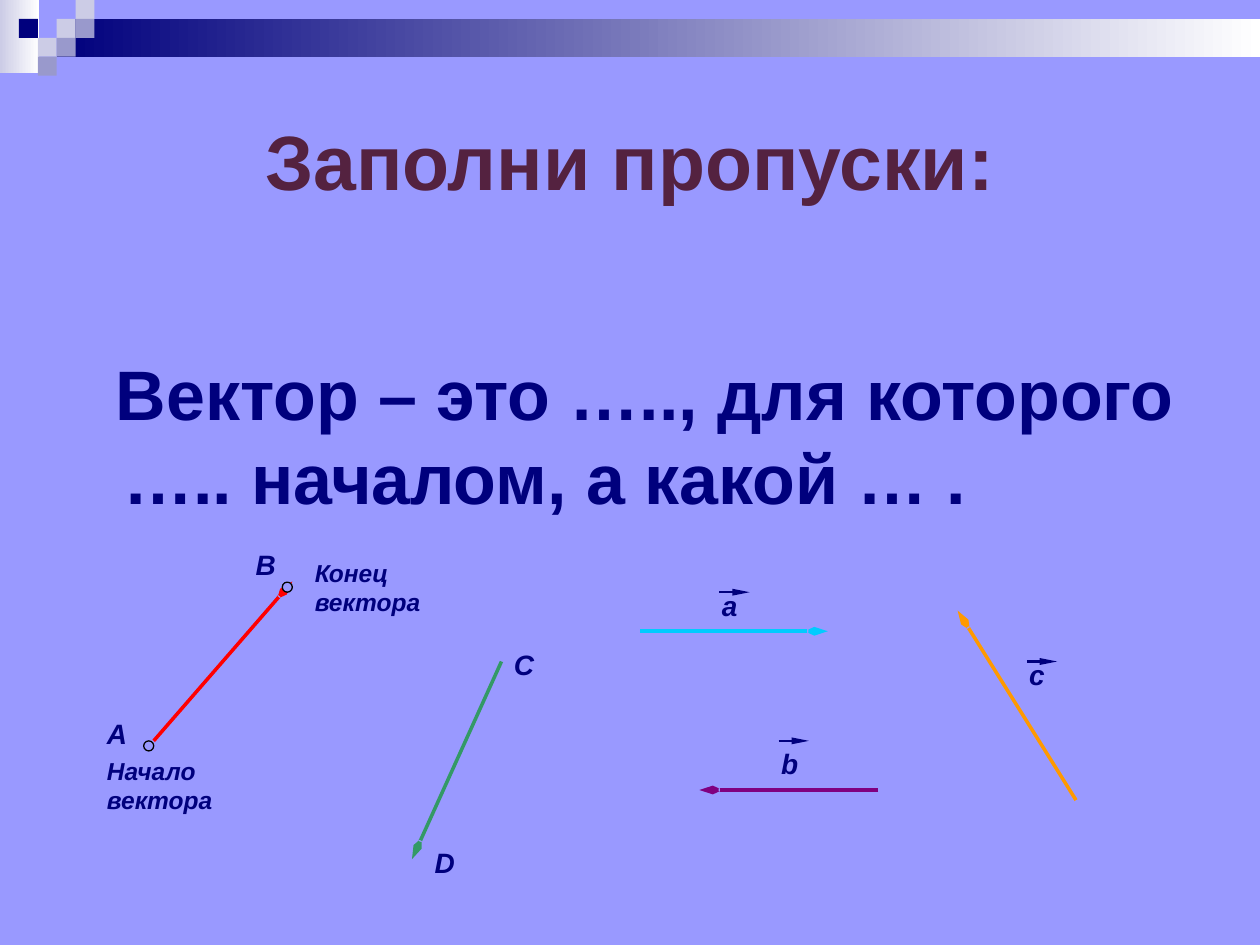
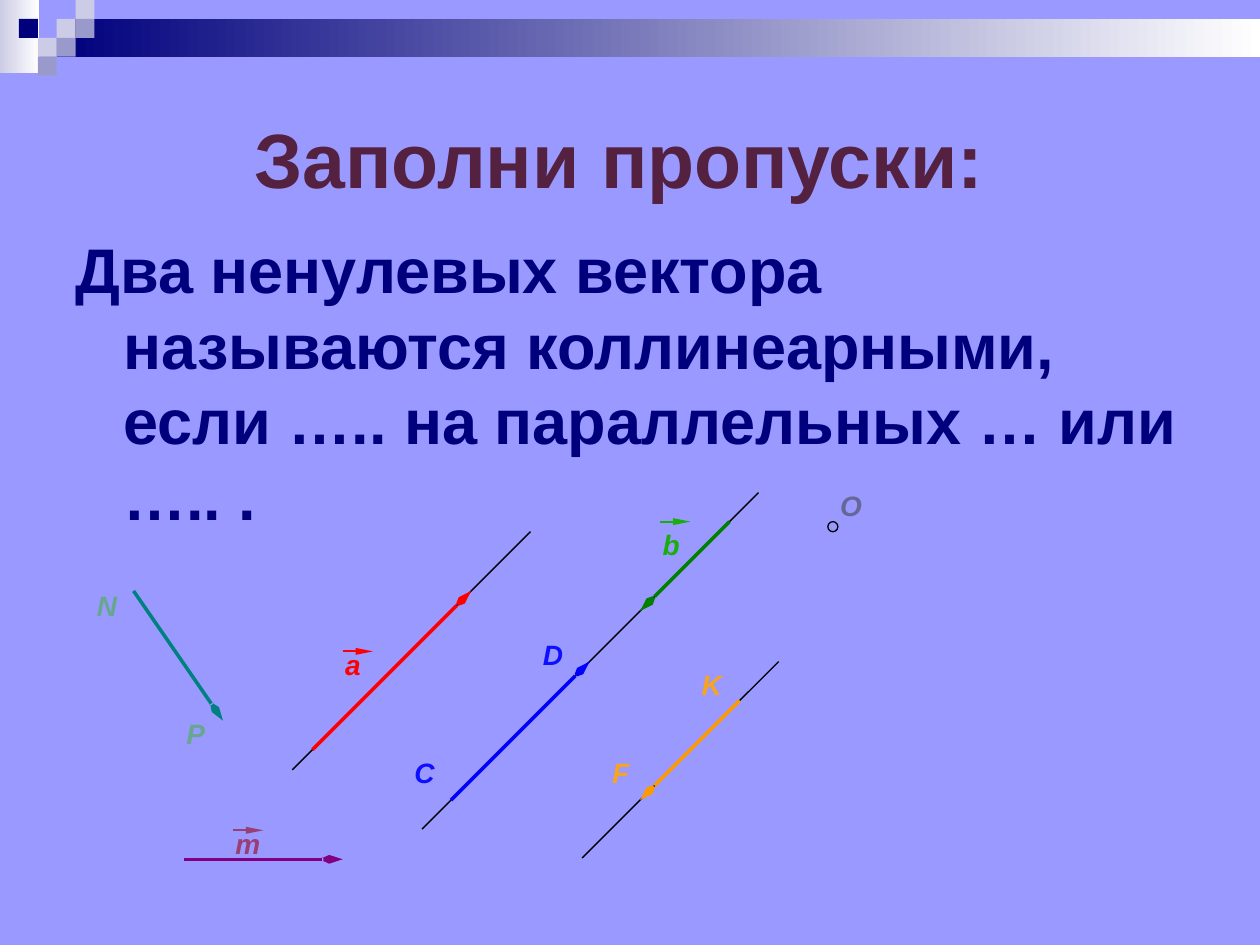
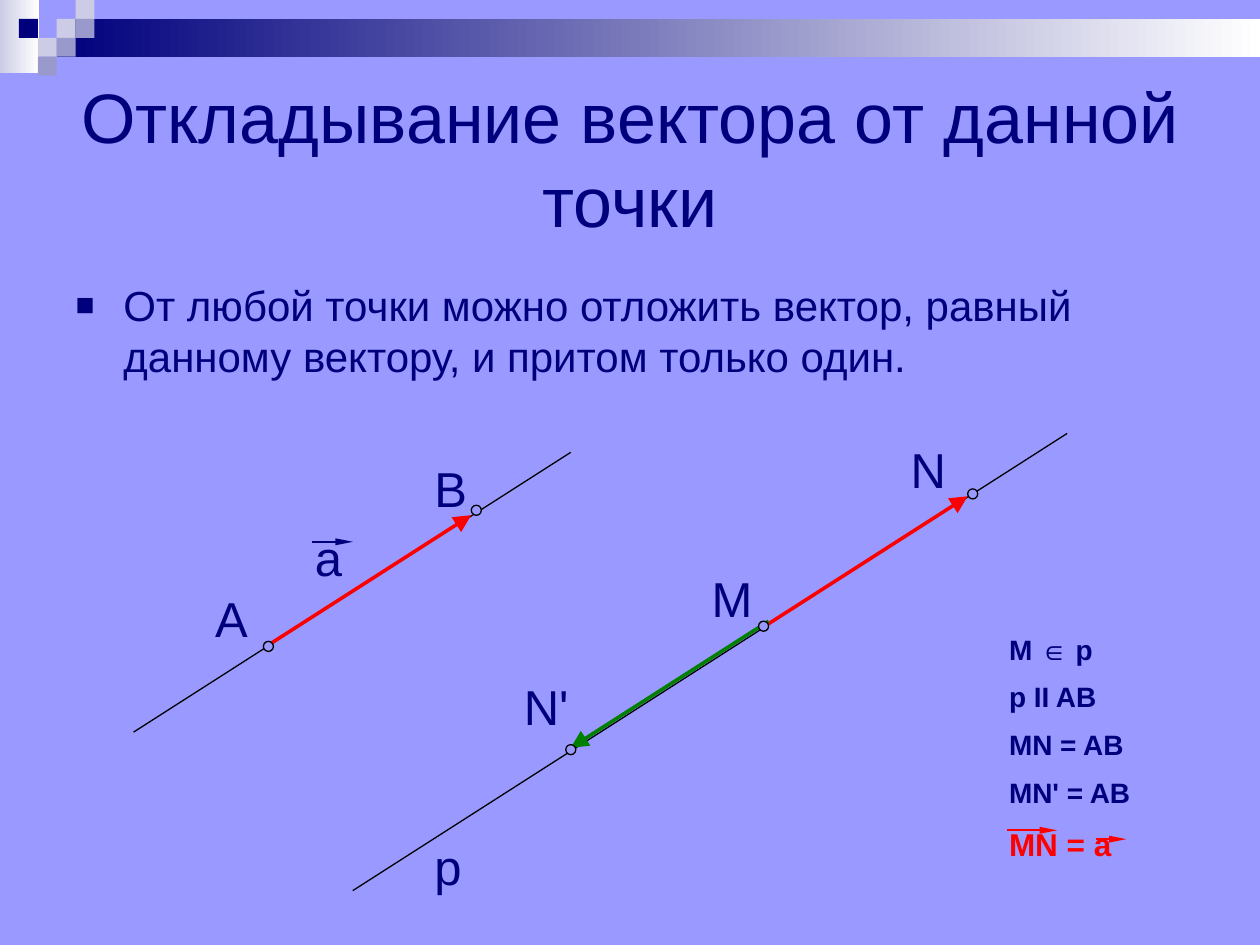
from lxml.etree import SubElement
from pptx import Presentation
from pptx.dml.color import RGBColor
from pptx.enum.shapes import MSO_CONNECTOR, MSO_SHAPE
from pptx.enum.text import MSO_ANCHOR, MSO_AUTO_SIZE, PP_ALIGN
from pptx.oxml.ns import qn
from pptx.util import Inches, Pt

NAVY, LAVENDER, BLACK, PLUM = "00007D", "9999FF", "000000", "542240"
PALE, GREYISH, WHITE = "CCCCE6", "9999CC", "FFFFFF"
RED, GREEN, BLUE, ORANGE, PURPLE = "FF0000", "008000", "0000FF", "FF9900", "800080"
LIME, AMBER, INDIGO, MAUVE, SAGE = "19AE0E", "F7A51F", "0F0FFF", "993F75", "67A790"

# Line kinds: width in points, arrowhead, head width
LINE_KINDS = {
    "line": (0.75, None, None),
    "vector": (2, "arrow", "sm"),
    "big vector": (2, "triangle", "lg"),
    "overline": (1.25, "triangle", "sm"),
}
GRID = 0.08
SQUARE = 0.15
OVERLINED = "abcmа"
LETTER = {"size": Pt(16), "bold": True, "italic": True}
CAPTION = {**LETTER, "size": Pt(14)}
LARGE_LETTER = {"size": Pt(28)}
BOLD_HEADING = {"size": Pt(44), "bold": True}


def paint(part, colour):
    part.fill.solid()
    part.fill.fore_color.rgb = RGBColor.from_string(colour)


def write(paragraph, text, colour, font_values):
    run = paragraph.add_run()
    run.text = text
    for name, value in {"name": "Arial", **font_values}.items():
        setattr(run.font, name, value)
    paint(run.font, colour)


# Lines are grouped by slope: (x, y, run, colour); black ones are plain lines.
# Rings and labels start with their left and top.
lessons = [
    {
        "title": ("Заполни пропуски:", PLUM, BOLD_HEADING, 0.44, 1.65),
        "body": ("Вектор – это ….., для которого ….. началом, а какой … .",
                 {"size": Pt(40), "bold": True}, 2.73, 2.82),
        "first_indent": -0.06,
        "bullet": False,
        "vector": "vector",
        "lines": {
            -2.21: [(3.98, 5.25, -0.71, "339966")],
            0: [(5.08, 5.01, 1.49, "00CCFF"), (6.97, 6.27, -1.42, PURPLE)],
            1.6: [(8.54, 6.35, -0.94, ORANGE)],
            -1.15: [(1.22, 5.88, 1.1, RED)],
        },
        "rings": [(2.24, 4.62), (1.14, 5.88)],
        "font": LETTER,
        "labels": [
            ("В", 1.93, 4.3, NAVY), ("А", 0.75, 5.64, NAVY),
            ("Начало вектора", 0.75, 5.95, NAVY), ("Конец вектора", 2.4, 4.38, NAVY),
            ("C", 3.98, 5.09, NAVY), ("D", 3.35, 6.66, NAVY),
            ("a", 5.63, 4.62, NAVY), ("b", 6.1, 5.88, NAVY), ("c", 8.07, 5.17, NAVY),
        ],
    },
    {
        "title": ("Заполни пропуски: ", PLUM, BOLD_HEADING, 0.5, 1.5),
        "body": ("Два ненулевых вектора называются коллинеарными, "
                 "если ….. на параллельных … или ….. .",
                 {"size": Pt(36), "bold": True}, 1.78, 2.84),
        "first_indent": -0.38,
        "bullet": False,
        "vector": "vector",
        "lines": {
            -1: [(4.21, 4.22, -1.89, BLACK), (6.02, 3.91, -2.67, BLACK),
                 (6.18, 5.25, -1.56, BLACK), (2.48, 5.95, 1.26, RED),
                 (5.79, 4.14, -0.71, GREEN), (3.58, 6.35, 1.1, BLUE),
                 (5.87, 5.56, -0.79, ORANGE)],
            0: [(1.46, 6.82, 1.26, PURPLE)],
            1.45: [(1.06, 4.69, 0.71, "008080")],
        },
        "rings": [(6.57, 4.14)],
        "font": LETTER,
        "labels": [
            ("a", 2.64, 5.09, RED), ("C", 3.19, 5.95, INDIGO), ("D", 4.21, 5.01, INDIGO),
            ("b", 5.16, 4.14, LIME), ("F", 4.76, 5.95, AMBER), ("K", 5.47, 5.25, AMBER),
            ("O", 6.57, 3.83, "666699"), ("m", 1.77, 6.51, MAUVE),
            ("N", 0.67, 4.62, SAGE), ("P", 1.38, 5.64, SAGE),
        ],
    },
    {
        "title": ("Откладывание вектора от данной точки", NAVY,
                  {"size": Pt(40)}, 0.5, 1.5),
        "body": ("От любой точки можно отложить вектор, равный данному вектору, "
                 "и притом только один.", {"size": Pt(24)}, 2.17, 1.03),
        "first_indent": -0.38,
        "bullet": True,
        "vector": "big vector",
        "lines": {
            -0.64: [(8.47, 3.44, -5.67, BLACK), (4.53, 3.59, -3.47, BLACK),
                    (2.16, 5.1, 1.58, RED), (6.1, 4.95, 1.58, RED),
                    (6.1, 4.93, -1.57, GREEN)],
        },
        "rings": [(2.09, 5.09), (3.74, 4.01), (6.02, 4.93), (4.49, 5.91), (7.68, 3.88)],
        "font": LARGE_LETTER,
        "labels": [
            ("а", 2.4, 4.14, NAVY), ("А", 1.61, 4.62, NAVY), ("В", 3.35, 3.59, NAVY),
            ("М", 5.55, 4.46, NAVY), ("N'", 4.06, 5.32, NAVY), ("N", 7.13, 3.44, NAVY),
            ("p", 3.35, 6.59, NAVY),
        ],
    },
]

prs = Presentation()
prs.slide_width, prs.slide_height = Inches(10), Inches(7.5)
master = prs.slide_master
paint(master.background, LAVENDER)

for lesson in lessons:
    slide = prs.slides.add_slide(prs.slide_layouts[1])

    # Title and body
    title, body = slide.placeholders
    title_text, title_colour, title_font, *title_place = lesson["title"]
    body_text, body_font, *body_place = lesson["body"]
    for holder, (top, height), anchor in ((title, title_place, MSO_ANCHOR.MIDDLE),
                                          (body, body_place, MSO_ANCHOR.TOP)):
        holder.left, holder.width = Inches(0.5), Inches(9)
        holder.top, holder.height = Inches(top), Inches(height)
        holder.text_frame.auto_size = MSO_AUTO_SIZE.NONE
        holder.text_frame.vertical_anchor = anchor
    heading = title.text_frame.paragraphs[0]
    heading.alignment = PP_ALIGN.CENTER
    write(heading, title_text, title_colour, title_font)

    statement = body.text_frame.paragraphs[0]
    write(statement, body_text, NAVY, body_font)
    indents = statement._p.get_or_add_pPr()
    indents.set("marL", str(Inches(0.38)))
    indents.set("indent", str(Inches(lesson["first_indent"])))
    if lesson["bullet"]:
        SubElement(SubElement(indents, qn("a:buClr")), qn("a:srgbClr"), val=NAVY)
        SubElement(indents, qn("a:buSzPct"), val="75000")
        SubElement(indents, qn("a:buFont"), typeface="Arial")
        SubElement(indents, qn("a:buChar"), char="■")
    else:
        SubElement(indents, qn("a:buNone"))

    # Labels
    strokes = [("line" if colour == BLACK else lesson["vector"], x, y, run, slope, colour)
               for slope, family in lesson["lines"].items()
               for x, y, run, colour in family]
    for text, x, y, colour in lesson["labels"]:
        font_values, width, height = lesson["font"], 0.39, 0.37
        if " " in text:
            font_values, width, height = CAPTION, 1.65, 0.57
        elif font_values is LARGE_LETTER:
            width, height = 0.63, 0.57
        label = slide.shapes.add_textbox(*map(Inches, (x, y, width, height)))
        label.text_frame.word_wrap = True
        write(label.text_frame.paragraphs[0], text, colour, font_values)

        # The overline of a vector name grows with the letter
        if text in OVERLINED:
            steps = 2 if font_values is LARGE_LETTER else 1
            drop = 0 if text == "b" else steps * GRID
            strokes.append(("overline", x + GRID, y + drop, (steps + 2) * GRID, 0, colour))

    # Overlines of the last equality
    if lesson is lessons[-1]:
        strokes += [("overline", 7.99, 6.59, 5 * GRID, 0, RED),
                    ("overline", 8.7, 6.66, 3 * GRID, 0, RED)]

    # Lines and vectors
    for kind, x, y, run, slope, colour in strokes:
        width, head, head_width = LINE_KINDS[kind]
        vector = slide.shapes.add_connector(
            MSO_CONNECTOR.STRAIGHT, *map(Inches, (x, y, x + run, y + run * slope)))
        paint(vector.line, colour)
        vector.line.width = Pt(width)
        outline = vector.element.spPr.find(qn("a:ln"))
        if head:
            SubElement(outline, qn("a:tailEnd"), type=head, w=head_width, len="lg")
        SubElement(vector.element.spPr, qn("a:effectLst"))

    # Points
    for x, y in lesson["rings"]:
        ring = slide.shapes.add_shape(MSO_SHAPE.OVAL, *map(Inches, (x, y, GRID, GRID)))
        ring.shadow.inherit = False
        paint(ring, LAVENDER)
        paint(ring.line, BLACK)
        ring.line.width = Pt(0.75)

# Conditions on the last slide
conditions = slide.shapes.add_textbox(*map(Inches, (7.91, 4.97, 1.49, 2.02))).text_frame
conditions.word_wrap = True
for number, text in enumerate(["M ∈ p", "p II AB", "MN = AB", "MN' = AB", "MN = a"]):
    condition = conditions.add_paragraph() if number else conditions.paragraphs[0]
    size, colour = (18, RED) if text == "MN = a" else (16, NAVY)
    condition.space_before = Pt(size / 2)
    write(condition, text, colour, {"size": Pt(size), "bold": True})

# Band and squares, moved to the master behind everything else
ornaments = [(0, 0, 0.31, 0.58, (PALE, WHITE)),
             (3 * SQUARE, SQUARE, 9.55, 2 * SQUARE, (NAVY, WHITE))]
squares = {PALE: [(3, 1), (4, 0), (2, 2)], GREYISH: [(4, 1), (3, 2), (2, 3)],
           NAVY: [(1, 1)]}
ornaments += [(column * SQUARE, row * SQUARE, SQUARE, SQUARE, (colour,))
              for colour, cells in squares.items() for column, row in cells]
for depth, (x, y, width, height, colours) in enumerate(ornaments):
    ornament = slide.shapes.add_shape(
        MSO_SHAPE.RECTANGLE, *map(Inches, (x, y, width, height)))
    ornament.shadow.inherit = False
    ornament.line.fill.background()
    if len(colours) == 1:
        paint(ornament, colours[0])
    else:
        ornament.fill.gradient()
        ornament.fill.gradient_angle = 0
        for stop, colour in zip(ornament.fill.gradient_stops, colours):
            stop.color.rgb = RGBColor.from_string(colour)
    ornament.element.nvSpPr.cNvPr.set("id", str(100 + depth))
    master.shapes.element.insert(2 + depth, ornament.element)

prs.save("out.pptx")
